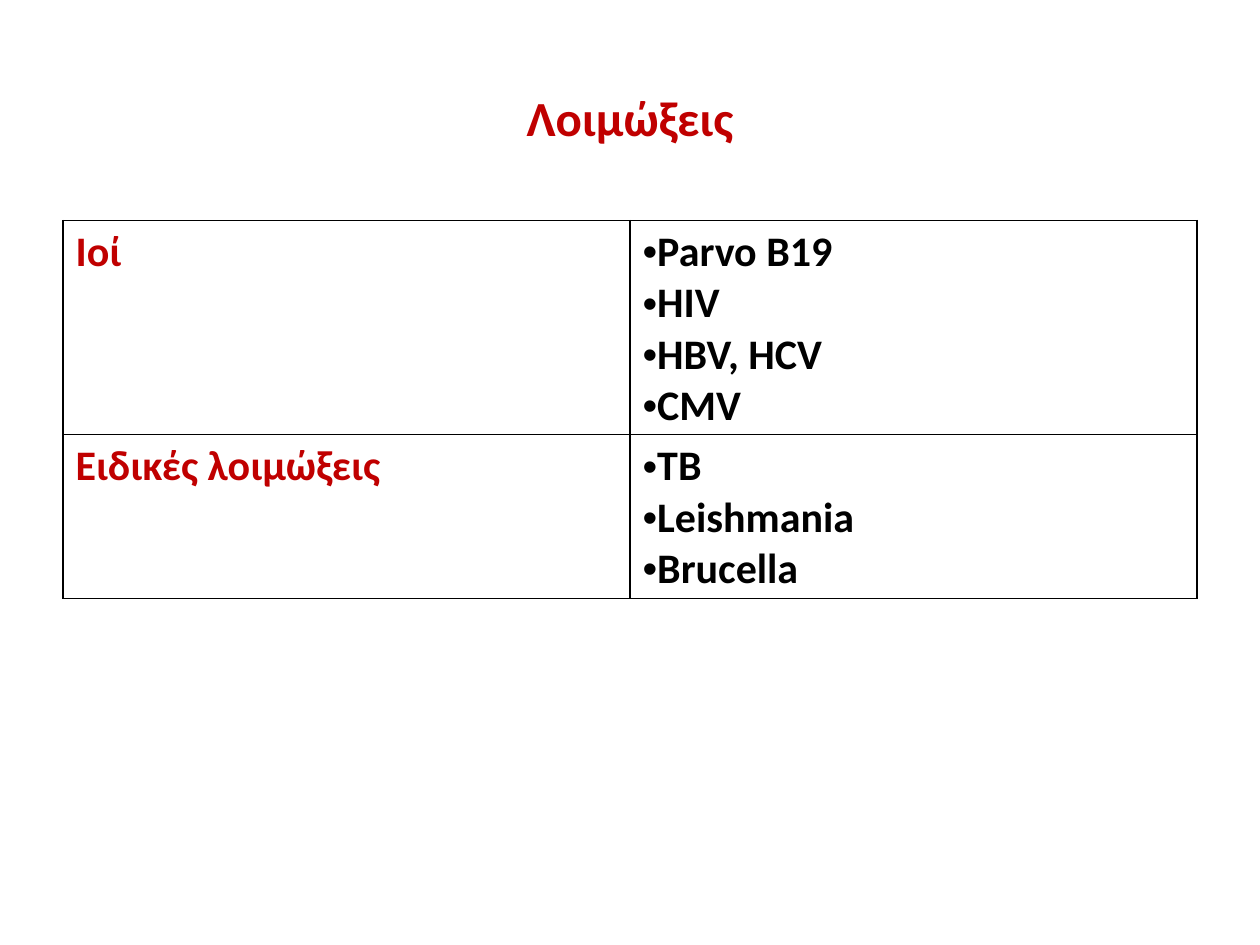
from dataclasses import dataclass
from lxml.etree import SubElement
from pptx import Presentation
from pptx.dml.color import RGBColor
from pptx.enum.text import MSO_ANCHOR, PP_ALIGN
from pptx.oxml.ns import qn
from pptx.util import Inches, Pt

TITLE = "Λοιμώξεις"
ROWS = [
    ("Ιοί", ["Parvo B19", "HIV", "HBV, HCV", "CMV"]),
    ("Ειδικές λοιμώξεις", ["TB", "Leishmania", "Brucella"]),
]


@dataclass(frozen=True)
class Theme:
    font: str = "Calibri"
    red: str = "C00000"
    black: str = "000000"
    head: int = 28
    body: int = 24
    rule: int = 1


THEME = Theme()
LEFT, WIDE = 0.5, 9
LINE, PAD = 0.4, 0.1


def write(para, text, size, color):
    run = para.add_run()
    run.text = text
    font = run.font
    font.name, font.size, font.bold = THEME.font, Pt(size), True
    font.color.rgb = RGBColor.from_string(color)


def bullet(para):
    props = para._p.get_or_add_pPr()
    props.set("marL", "0")
    props.set("indent", "0")
    SubElement(props, qn("a:buFont"), typeface="Arial")
    SubElement(props, qn("a:buChar"), char="•")


def border(cell):
    props = cell._tc.get_or_add_tcPr()
    for spot, side in enumerate(("lnL", "lnR", "lnT", "lnB")):
        line = SubElement(props, qn(f"a:{side}"), w=str(Pt(THEME.rule)))
        fill = SubElement(line, qn("a:solidFill"))
        SubElement(fill, qn("a:srgbClr"), val=THEME.black)
        props.insert(spot, line)


def fill_cell(cell, lines, color, marks):
    cell.fill.background()
    border(cell)
    frame = cell.text_frame
    for spot, text in enumerate(lines):
        para = frame.add_paragraph() if spot else frame.paragraphs[0]
        if marks:
            bullet(para)
        write(para, text, THEME.body, color)


def add_title(slide):
    box = slide.shapes.add_textbox(
        Inches(LEFT), Inches(0.3), Inches(WIDE), Inches(1.25))
    frame = box.text_frame
    frame.word_wrap = True
    frame.vertical_anchor = MSO_ANCHOR.MIDDLE
    para = frame.paragraphs[0]
    para.alignment = PP_ALIGN.CENTER
    write(para, TITLE, THEME.head, THEME.red)


def add_grid(slide):
    highs = [PAD + LINE * len(items) for _, items in ROWS]
    grid = slide.shapes.add_table(
        len(ROWS), 2, Inches(LEFT), Inches(1.75),
        Inches(WIDE), Inches(sum(highs))).table
    grid.first_row = grid.horz_banding = False
    for row, high, (name, items) in zip(grid.rows, highs, ROWS):
        row.height = Inches(high)
        fill_cell(row.cells[0], [name], THEME.red, False)
        fill_cell(row.cells[1], items, THEME.black, True)


def main():
    deck = Presentation()
    deck.slide_width, deck.slide_height = Inches(10), Inches(7.5)
    slide = deck.slides.add_slide(deck.slide_layouts[6])
    add_title(slide)
    add_grid(slide)
    deck.save("out.pptx")


if __name__ == "__main__":
    main()
